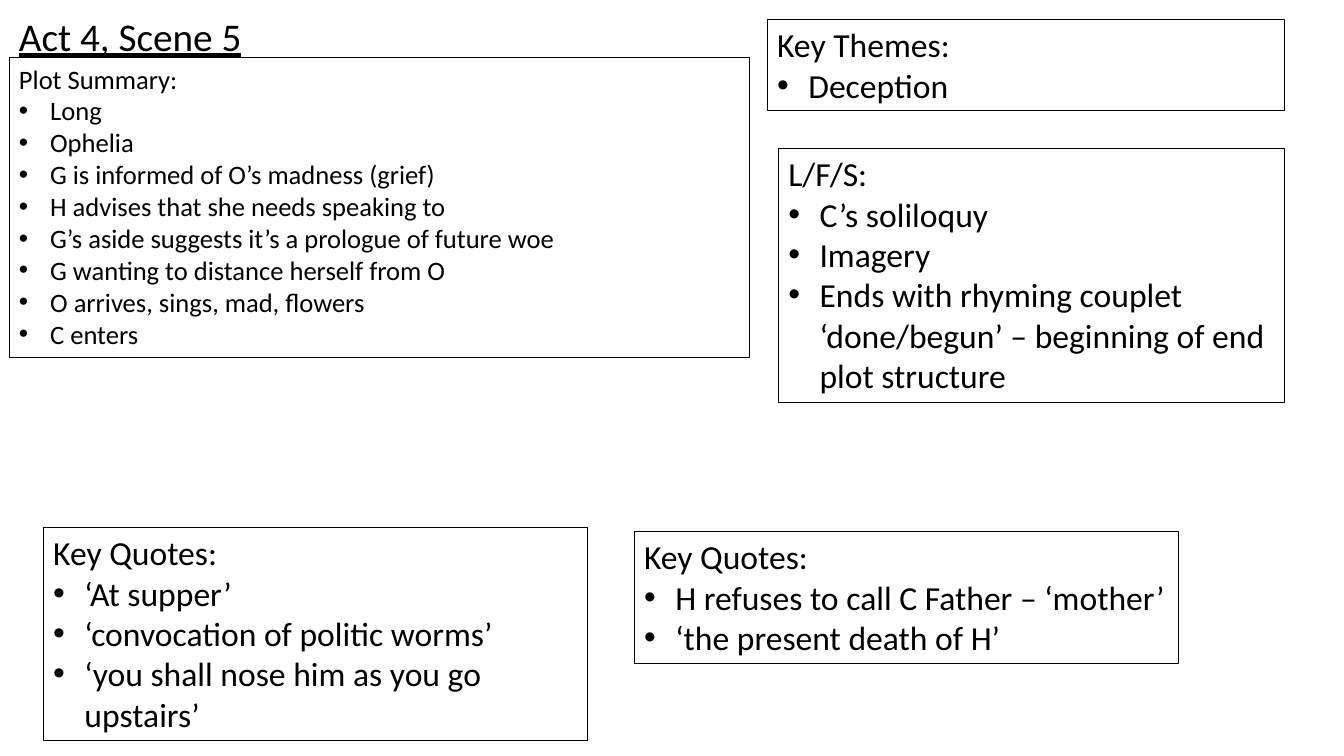
from pptx import Presentation
from pptx.dml.color import RGBColor
from pptx.enum.text import MSO_AUTO_SIZE
from pptx.oxml.ns import qn
from pptx.util import Inches, Pt
from lxml import etree

GROW = MSO_AUTO_SIZE.SHAPE_TO_FIT_TEXT
BLACK = "000000"
INDENT = Inches(0.31)

# (left, top, width, height), text size, heading, bullet points
NOTES = [
    ((0.43, 5.23, 5.4, 2.12), 24, "Key Quotes:", [
        "‘At supper’",
        "‘convocation of politic worms’",
        "‘you shall nose him as you go upstairs’"]),
    ((7.61, 0.19, 5.13, 0.91), 24, "Key Themes:", ["Deception"]),
    ((7.72, 1.47, 5.02, 2.52), 24, "L/F/S:", [
        "C’s soliloquy",
        "Imagery",
        "Ends with rhyming couplet ‘done/begun’ – beginning of end plot structure"]),
    ((0.09, 0.57, 7.34, 2.98), 19, "Plot Summary:", [
        "Long",
        "Ophelia",
        "G is informed of O’s madness (grief)",
        "H advises that she needs speaking to",
        "G’s aside suggests it’s a prologue of future woe",
        "G wanting to distance herself from O",
        "O arrives, sings, mad, flowers",
        "C enters"]),
    ((6.29, 5.27, 5.4, 1.31), 24, "Key Quotes:", [
        "H refuses to call C Father – ‘mother’",
        "‘the present death of H’"]),
]


def color(hex_code):
    return RGBColor.from_string(hex_code)


def add_text(box, lines, size, wrap):
    """Add a text box with one paragraph per line."""
    sp = slide.shapes.add_textbox(*(Inches(v) for v in box))
    tf = sp.text_frame
    tf.text = "\n".join(lines)
    tf.word_wrap = wrap
    tf.auto_size = GROW
    for p in tf.paragraphs:
        font = p.runs[0].font
        font.name = "Calibri"
        font.size = Pt(size)
        font.color.rgb = color(BLACK)
    return sp


prs = Presentation()
prs.slide_width, prs.slide_height = Inches(13.33), Inches(7.5)
slide = prs.slides.add_slide(prs.slide_layouts[6])

title = add_text((0.09, 0.07, 2.44, 0.57), ["Act 4, Scene 5"], 28, False)
title.text_frame.paragraphs[0].runs[0].font.underline = True

for box, size, heading, points in NOTES:
    sp = add_text(box, [heading, *points], size, True)
    sp.line.color.rgb = color(BLACK)
    sp.line.width = Pt(0.75)
    for p in sp.text_frame.paragraphs[1:]:
        pPr = p._p.get_or_add_pPr()
        pPr.set("marL", str(INDENT))
        pPr.set("indent", str(-INDENT))
        etree.SubElement(pPr, qn("a:buFont")).set("typeface", "Arial")
        etree.SubElement(pPr, qn("a:buChar")).set("char", "•")

prs.save("out.pptx")
